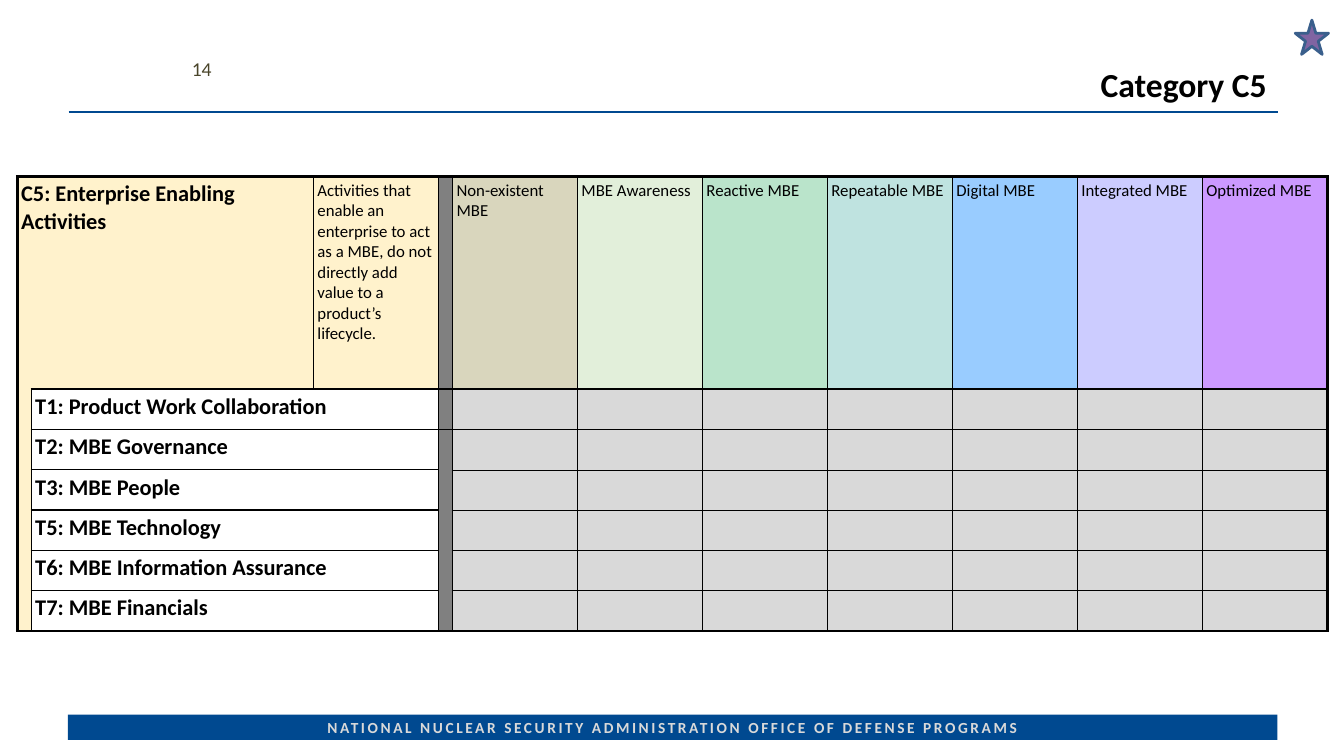
from lxml.etree import SubElement
from pptx import Presentation
from pptx.dml.color import RGBColor
from pptx.enum.shapes import MSO_CONNECTOR, MSO_SHAPE
from pptx.enum.text import MSO_ANCHOR as Anchor, PP_ALIGN as Align
from pptx.oxml import parse_xml
from pptx.oxml.ns import nsdecls, qn
from pptx.util import Pt

NAVY = RGBColor(0x00, 0x49, 0x90)
BLACK = RGBColor(0x00, 0x00, 0x00)
WHITE = RGBColor(0xFF, 0xFF, 0xFF)
OLIVE = RGBColor(0x4A, 0x45, 0x2A)
CREAM = RGBColor(0xFF, 0xF2, 0xCC)
DIVIDER = RGBColor(0x80, 0x80, 0x80)
SILVER = RGBColor(0xD9, 0xD9, 0xD9)
PURPLE = RGBColor(0x80, 0x64, 0xA2)
STAR_EDGE = RGBColor(0x3A, 0x5F, 0x8C)

LEVELS = [
    ("Non-existent MBE", RGBColor(0xD9, 0xD6, 0xBD)),
    ("MBE Awareness", RGBColor(0xE2, 0xEF, 0xDA)),
    ("Reactive MBE", RGBColor(0xBA, 0xE4, 0xCB)),
    ("Repeatable MBE", RGBColor(0xBF, 0xE3, 0xE0)),
    ("Digital MBE", RGBColor(0x99, 0xCC, 0xFF)),
    ("Integrated MBE", RGBColor(0xCC, 0xCC, 0xFF)),
    ("Optimized MBE", RGBColor(0xCC, 0x99, 0xFF)),
]
TOPICS = [
    "T1: Product Work Collaboration",
    "T2: MBE Governance",
    "T3: MBE People",
    "T5: MBE Technology",
    "T6: MBE Information Assurance",
    "T7: MBE Financials",
]
CATEGORY = "C5: Enterprise Enabling Activities"
SUMMARY = ("Activities that enable an enterprise to act as a MBE, "
           "do not directly add value to a product’s lifecycle.")
WIDTHS = [10.08, 201.6, 89.28, 10.08] + [89.28] * len(LEVELS)
HEIGHTS = [151.9] + [28.8] * len(TOPICS)
HEADER_EDGES = [2.25, None, 1, 0.5, 0.5] + [1] * 6 + [2.25]
TOPIC_EDGES = [2.25, 1, None, 1, None] + [0.25] * 6 + [2.25]


def write(frame, text, size, color=BLACK, bold=False, align=Align.LEFT,
          anchor=Anchor.TOP, inset=None, tracking=None, leading=None):
    """Put one formatted paragraph into a text frame."""
    frame.word_wrap = True
    frame.vertical_anchor = anchor
    if inset is not None:
        frame.margin_left = frame.margin_right = Pt(inset)
        frame.margin_top = frame.margin_bottom = Pt(inset)
    paragraph = frame.paragraphs[0]
    paragraph.alignment = align
    if leading:
        paragraph.line_spacing = leading
    run = paragraph.add_run()
    run.text = text
    font = run.font
    font.name, font.size, font.bold = "Calibri", Pt(size), bold
    font.color.rgb = color
    if tracking:
        font._element.set("spc", str(round(tracking * 100)))


def add_label(slide, text, left, top, width, height, **style):
    """Add a text box with formatted text."""
    box = slide.shapes.add_textbox(Pt(left), Pt(top), Pt(width), Pt(height))
    write(box.text_frame, text, **style)


def add_block(slide, preset, left, top, width, height, fill, edge=None):
    """Add a filled preset shape, outlined only when an edge colour is given."""
    block = slide.shapes.add_shape(preset, Pt(left), Pt(top), Pt(width), Pt(height))
    block.shadow.inherit = False
    block.fill.solid()
    block.fill.fore_color.rgb = fill
    if edge is None:
        block.line.fill.background()
    else:
        block.line.color.rgb = edge
        block.line.width = Pt(2)
    return block


def add_rule(slide, x1, x2, y):
    """Add the horizontal line under the title."""
    rule = slide.shapes.add_connector(MSO_CONNECTOR.STRAIGHT, Pt(x1), Pt(y), Pt(x2), Pt(y))
    rule.line.color.rgb = NAVY
    rule.line.width = Pt(1.5)
    SubElement(rule._element.spPr, qn("a:effectLst"))


def row_edge(y, column):
    """Return the width of the horizontal edge above row y."""
    if y in (0, len(HEIGHTS)):
        return 2.25
    if column == 0:
        return None
    if y == 1 or column in (1, 2):
        return 1
    return None if column == 3 else 0.25


def set_borders(cell, row, column):
    """Draw the cell's edges by their place in the grid."""
    edges = TOPIC_EDGES if row else HEADER_EDGES
    widths = {"lnL": edges[column], "lnR": edges[column + 1],
              "lnT": row_edge(row, column), "lnB": row_edge(row + 1, column)}
    drawn = [(tag, width) for tag, width in widths.items() if width]
    properties = cell._tc.get_or_add_tcPr()
    for index, (tag, width) in enumerate(drawn):
        properties.insert(index, parse_xml(
            f'<a:{tag} {nsdecls("a")} w="{Pt(width)}"><a:solidFill>'
            f'<a:srgbClr val="{BLACK}"/></a:solidFill></a:{tag}>'))


def cell_fill(row, column):
    """Return the fill colour for a place in the grid."""
    if column == 3:
        return DIVIDER
    if column == 0 or (row == 0 and column < 3):
        return CREAM
    if column < 3:
        return WHITE
    return SILVER if row else LEVELS[column - 4][1]


def fill_cell(cell, text, size, bold=False):
    """Write text at the top left of a table cell."""
    write(cell.text_frame, text, size=size, bold=bold)


def add_maturity_table(slide):
    """Add the table of topics against maturity levels."""
    table = slide.shapes.add_table(
        len(HEIGHTS), len(WIDTHS), Pt(12.24), Pt(126),
        Pt(sum(WIDTHS)), Pt(sum(HEIGHTS))).table
    table.first_row = table.horz_banding = False
    style = table._tbl.tblPr.find(qn("a:tableStyleId"))
    style.text = "{2D5ABB26-0587-4C30-8999-92F81FD0307C}"
    for column, width in zip(table.columns, WIDTHS):
        column.width = Pt(width)
    for row, height in enumerate(HEIGHTS):
        table.rows[row].height = Pt(height)
        for column in range(len(WIDTHS)):
            cell = table.cell(row, column)
            cell.margin_left = cell.margin_right = Pt(2.88)
            cell.margin_top = cell.margin_bottom = Pt(2.88)
            cell.fill.solid()
            cell.fill.fore_color.rgb = cell_fill(row, column)
            set_borders(cell, row, column)
    table.cell(0, 0).merge(table.cell(0, 1))
    fill_cell(table.cell(0, 0), CATEGORY, 16, bold=True)
    fill_cell(table.cell(0, 2), SUMMARY, 12)
    for column, (level, _) in enumerate(LEVELS, start=4):
        fill_cell(table.cell(0, column), level, 12)
    for row, topic in enumerate(TOPICS, start=1):
        table.cell(row, 1).merge(table.cell(row, 2))
        fill_cell(table.cell(row, 1), topic, 16, bold=True)


def main():
    """Build the slide and save it."""
    deck = Presentation()
    deck.slide_width, deck.slide_height = Pt(960), Pt(540)
    slide = deck.slides.add_slide(deck.slide_layouts[6])
    footer = add_block(slide, MSO_SHAPE.RECTANGLE, 48.5, 510.5, 864, 18, NAVY)
    write(footer.text_frame,
          "NATIONAL NUCLEAR SECURITY ADMINISTRATION OFFICE OF DEFENSE PROGRAMS",
          size=11, color=SILVER, bold=True, align=Align.CENTER, inset=2.16, tracking=1.8)
    add_rule(slide, 49, 913, 80)
    add_label(slide, "Category C5", 264, 13, 648, 64.8, size=24, bold=True,
              align=Align.RIGHT, anchor=Anchor.BOTTOM, leading=0.85)
    add_label(slide, "14", 125.3, 34.6, 33, 28.8, size=14, color=OLIVE,
              align=Align.RIGHT, anchor=Anchor.MIDDLE)
    add_maturity_table(slide)
    add_block(slide, MSO_SHAPE.STAR_5_POINT, 925.2, 14.4, 23.8, 24.5, PURPLE, edge=STAR_EDGE)
    deck.save("out.pptx")


if __name__ == "__main__":
    main()
